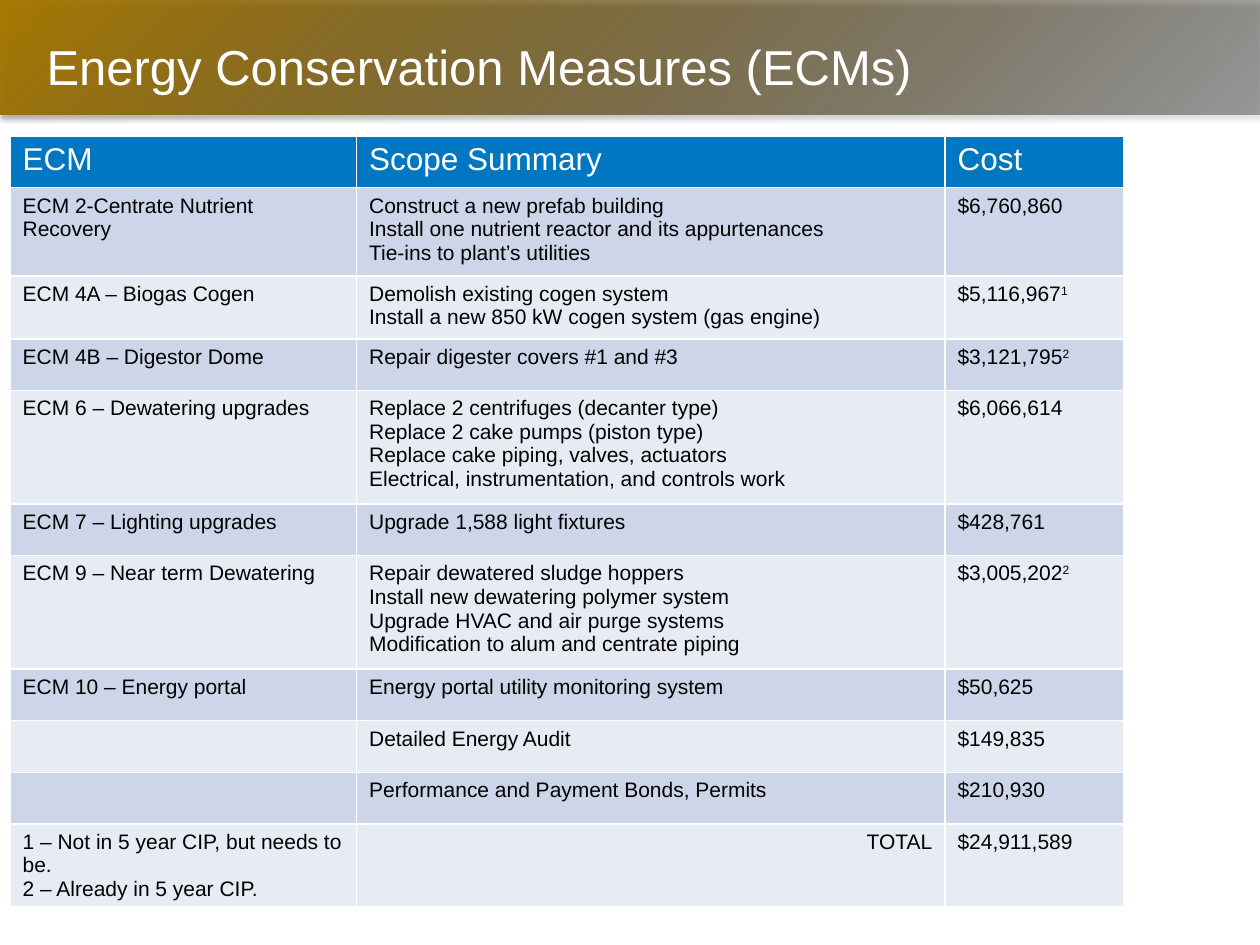
"""Build the slide of energy conservation measures with their scope and cost."""
from dataclasses import dataclass

from pptx import Presentation
from pptx.dml.color import RGBColor
from pptx.enum.shapes import MSO_SHAPE
from pptx.enum.text import MSO_ANCHOR, MSO_AUTO_SIZE, PP_ALIGN
from pptx.oxml import parse_xml
from pptx.oxml.ns import nsdecls
from pptx.util import Inches, Pt

RECTANGLE = MSO_SHAPE.RECTANGLE
MIDDLE = MSO_ANCHOR.MIDDLE
NO_AUTOFIT = MSO_AUTO_SIZE.NONE
LEFT, RIGHT = PP_ALIGN.LEFT, PP_ALIGN.RIGHT

GRID_COLUMNS, GRID_ROWS = 100, 75
ROW_HEIGHTS = {1: 4.1, 2: 5, 3: 7, 4: 9}
COLUMN_WIDTHS = (27.5, 46.7, 14.2)
TOTAL = "TOTAL"
MEASURES = [
    ("ECM", "Scope Summary", "Cost"),
    ("ECM 2-Centrate Nutrient Recovery",
     "Construct a new prefab building\n"
     "Install one nutrient reactor and its appurtenances\n"
     "Tie-ins to plant’s utilities", "$6,760,860"),
    ("ECM 4A – Biogas Cogen",
     "Demolish existing cogen system\n"
     "Install a new 850 kW cogen system (gas engine)", "$5,116,967^1"),
    ("ECM 4B – Digestor Dome", "Repair digester covers #1 and #3", "$3,121,795^2"),
    ("ECM 6 – Dewatering upgrades",
     "Replace 2 centrifuges (decanter type)\n"
     "Replace 2 cake pumps (piston type)\n"
     "Replace cake piping, valves, actuators\n"
     "Electrical, instrumentation, and controls work", "$6,066,614"),
    ("ECM 7 – Lighting upgrades", "Upgrade 1,588 light fixtures", "$428,761"),
    ("ECM 9 – Near term Dewatering",
     "Repair dewatered sludge hoppers\n"
     "Install new dewatering polymer system\n"
     "Upgrade HVAC and air purge systems\n"
     "Modification to alum and centrate piping", "$3,005,202^2"),
    ("ECM 10 – Energy portal", "Energy portal utility monitoring system", "$50,625"),
    ("", "Detailed Energy Audit", "$149,835"),
    ("", "Performance and Payment Bonds, Permits", "$210,930"),
    ("1 – Not in 5 year CIP, but needs to be.\n2 – Already in 5 year CIP.",
     TOTAL, "$24,911,589"),
]


@dataclass(frozen=True)
class Theme:
    font: str = "Arial"
    light: str = "FFFFFF"
    dark: str = "000000"
    header: str = "0077C0"
    bands: tuple = ("E7ECF4", "CCD6E8")
    glow: str = "0D0D0D"
    gold: str = "A77903"
    title_size: int = 28
    header_size: int = 18
    body_size: int = 12


class SlideBuilder:
    def __init__(self, presentation, theme):
        self.theme = theme
        self.presentation = presentation
        self.slide = presentation.slides.add_slide(presentation.slide_layouts[5])

    def across(self, columns):
        return round(self.presentation.slide_width * columns / GRID_COLUMNS)

    def down(self, rows):
        return round(self.presentation.slide_height * rows / GRID_ROWS)

    def box(self, left, top, width, height):
        return self.across(left), self.down(top), self.across(width), self.down(height)

    def style(self, font, size, color):
        formats = {"name": self.theme.font, "size": Pt(size), "bold": False}
        for name, value in formats.items():
            setattr(font, name, value)
        font.color.rgb = RGBColor.from_string(color)

    def band(self, *place):
        shape = self.slide.shapes.add_shape(RECTANGLE, *self.box(*place))
        shape.line.fill.background()
        properties = shape._element.spPr
        properties.insert(2, parse_xml(
            f'<a:gradFill {nsdecls("a")} rotWithShape="1"><a:gsLst>'
            f'<a:gs pos="0"><a:srgbClr val="{self.theme.glow}"><a:alpha val="34000"/></a:srgbClr></a:gs>'
            f'<a:gs pos="100000"><a:srgbClr val="{self.theme.gold}"/></a:gs></a:gsLst>'
            '<a:path path="circle"><a:fillToRect l="100000" t="100000"/></a:path></a:gradFill>'))
        properties.append(parse_xml(
            f'<a:effectLst {nsdecls("a")}><a:outerShdw blurRad="{Pt(3.1)}" dist="{Pt(1.8)}" '
            f'dir="5400000" rotWithShape="0"><a:srgbClr val="{self.theme.dark}">'
            '<a:alpha val="35000"/></a:srgbClr></a:outerShdw></a:effectLst>'))
        self.slide.shapes._spTree.insert(2, shape._element)

    def title(self, text, *place):
        shape = self.slide.shapes.title
        for name, value in zip(("left", "top", "width", "height"), self.box(*place)):
            setattr(shape, name, value)
        frame = shape.text_frame
        frame.text = text
        formats = {"word_wrap": True, "auto_size": NO_AUTOFIT, "vertical_anchor": MIDDLE}
        for name, value in formats.items():
            setattr(frame, name, value)
        paragraph = frame.paragraphs[0]
        paragraph.alignment = LEFT
        self.style(paragraph.runs[0].font, self.theme.title_size, self.theme.light)

    def table(self, records, widths, left, top):
        heights = [ROW_HEIGHTS[max(text.count("\n") + 1 for text in record)] for record in records]
        place = self.box(left, top, sum(widths), sum(heights))
        table = self.slide.shapes.add_table(len(records), len(widths), *place).table
        for column, width in zip(table.columns, widths):
            column.width = self.across(width)
        for index, (row, height, record) in enumerate(zip(table.rows, heights, records)):
            row.height = self.down(height)
            for cell, text in zip(row.cells, record):
                self.cell(cell, text, index)

    def cell(self, cell, text, row_index):
        theme = self.theme
        if row_index:
            fill, size, color = theme.bands[row_index % 2], theme.body_size, theme.dark
        else:
            fill, size, color = theme.header, theme.header_size, theme.light
        properties = cell._tc.get_or_add_tcPr()
        for side in "LRTB":
            properties.append(parse_xml(
                f'<a:ln{side} {nsdecls("a")} w="{Pt(1)}"><a:solidFill>'
                f'<a:srgbClr val="{theme.light}"/></a:solidFill></a:ln{side}>'))
        cell.fill.solid()
        cell.fill.fore_color.rgb = RGBColor.from_string(fill)
        frame = cell.text_frame
        for index, line in enumerate(text.split("\n")):
            paragraph = frame.add_paragraph() if index else frame.paragraphs[0]
            paragraph.alignment = RIGHT if text == TOTAL else LEFT
            self.style(paragraph.font, size, color)
            body, _, note = line.partition("^")
            for part in filter(None, (body, note)):
                run = paragraph.add_run()
                run.text = part
                self.style(run.font, size, color)
                if part == note:
                    run._r.get_or_add_rPr().set("baseline", "30000")


def main():
    presentation = Presentation()
    presentation.slide_width, presentation.slide_height = Inches(10), Inches(7.5)
    builder = SlideBuilder(presentation, Theme())
    builder.band(0, 0, GRID_COLUMNS, 9.1)
    builder.title("Energy Conservation Measures (ECMs)", 2.7, 1.3, 78.1, 7.8)
    builder.table(MEASURES, COLUMN_WIDTHS, 0.8, 10.8)
    presentation.save("out.pptx")


if __name__ == "__main__":
    main()
